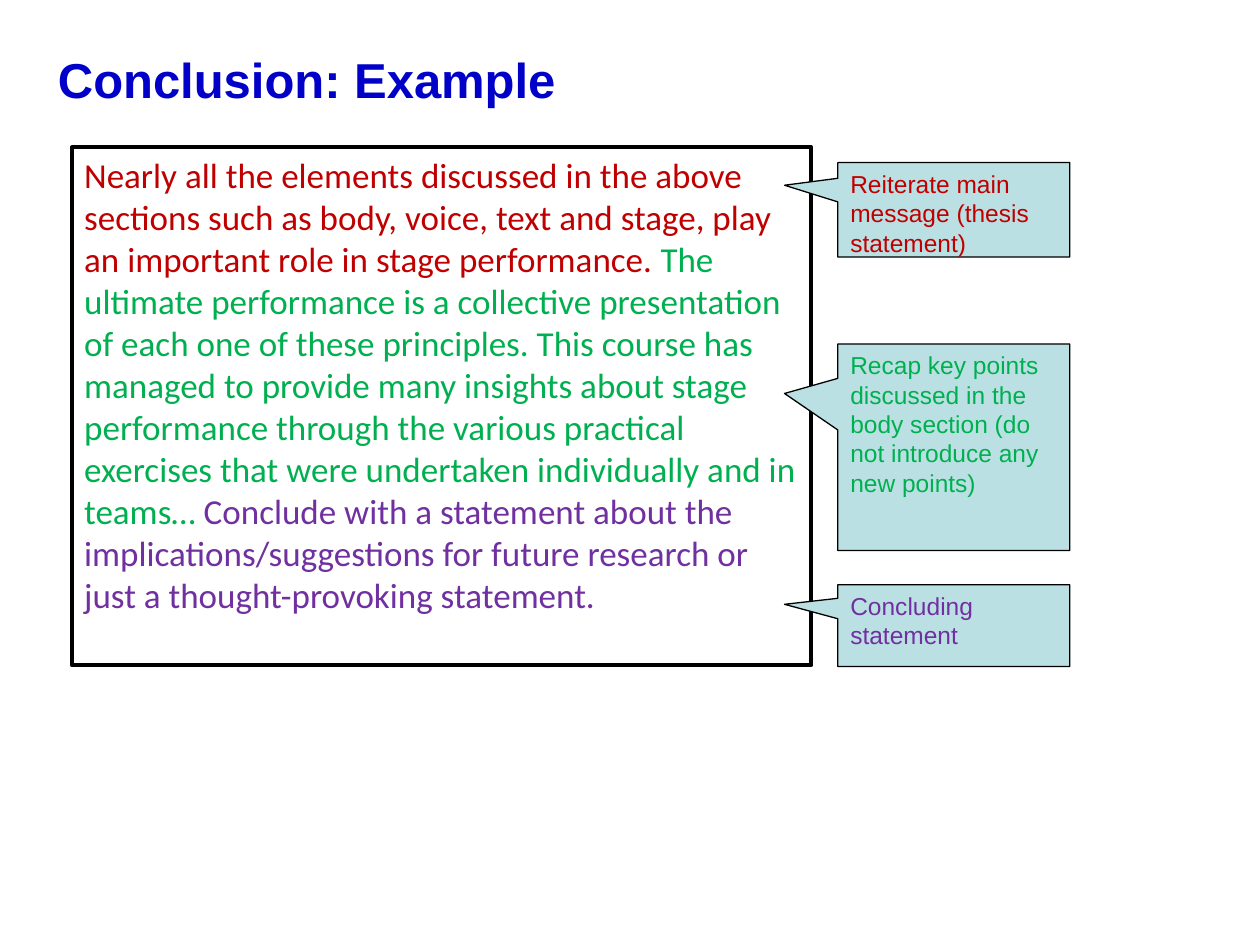
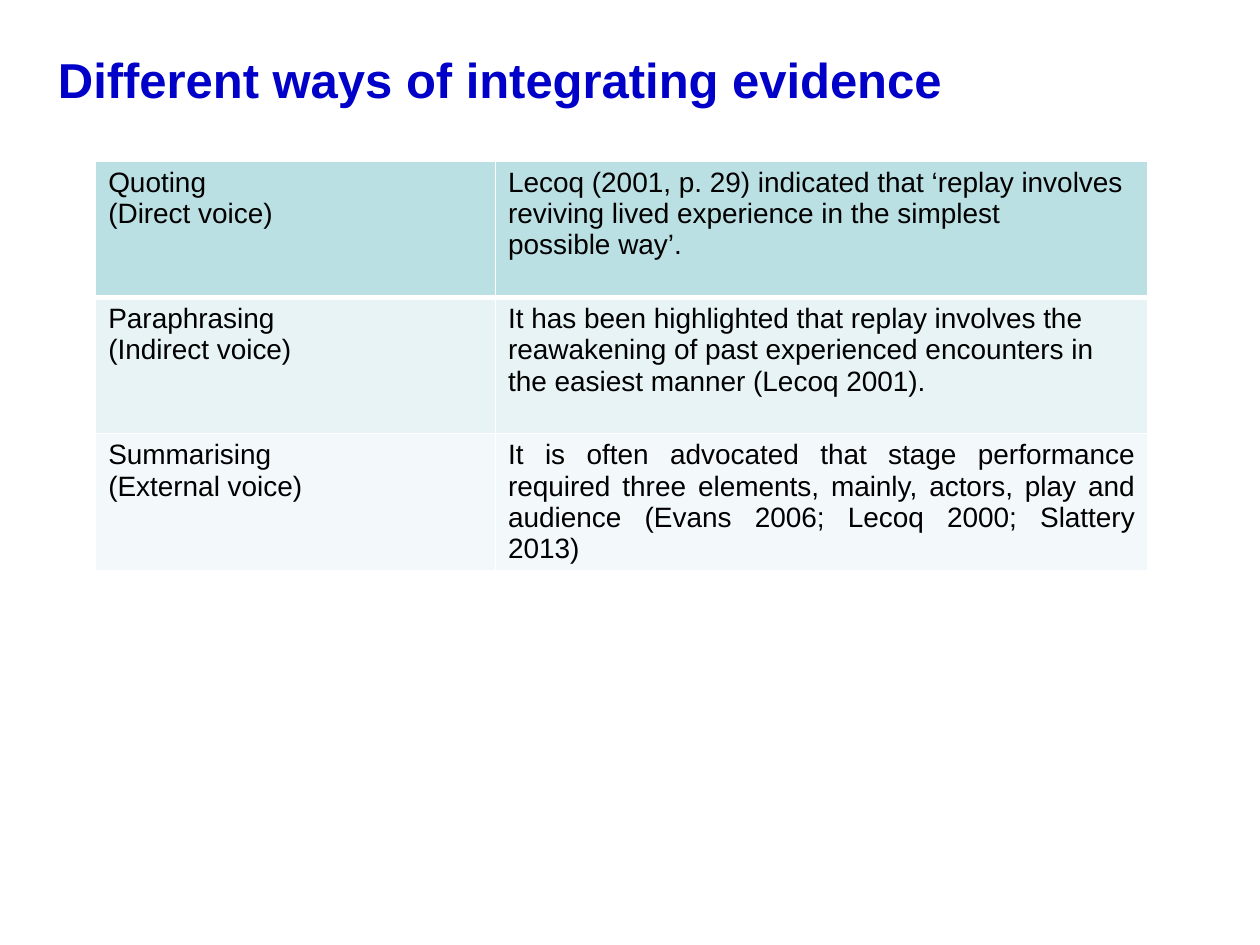
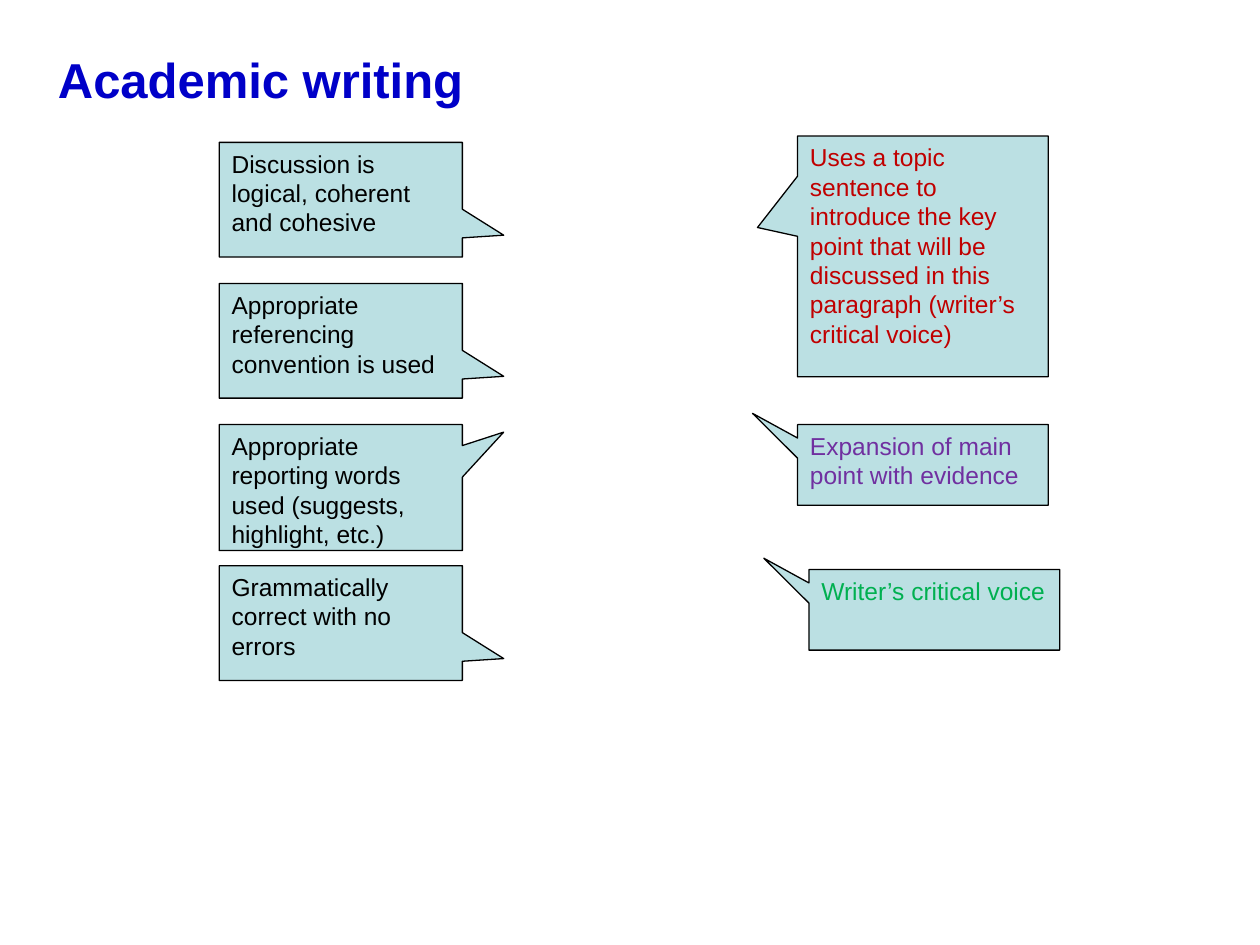
from dataclasses import dataclass

from lxml import etree
from pptx import Presentation
from pptx.dml.color import RGBColor
from pptx.enum.shapes import MSO_SHAPE
from pptx.enum.text import MSO_ANCHOR, PP_ALIGN
from pptx.oxml.ns import qn
from pptx.util import Inches, Pt

RECTANGLE = MSO_SHAPE.RECTANGLE
CALLOUT = MSO_SHAPE.RECTANGULAR_CALLOUT
TOP = MSO_ANCHOR.TOP
LEFT, JUSTIFY = PP_ALIGN.LEFT, PP_ALIGN.JUSTIFY
TITLE_ONLY = 5
COLUMNS, ROWS = 100, 75
SLIDE_WIDTH, SLIDE_HEIGHT = Inches(10), Inches(7.5)


@dataclass(frozen=True)
class Theme:
    """Colours, fonts and type sizes shared by the slides."""
    title: str = "0000C8"
    black: str = "000000"
    white: str = "FFFFFF"
    red: str = "C00000"
    green: str = "00B050"
    purple: str = "7030A0"
    panel: str = "BBE0E3"
    table_rows: tuple = ("BBE0E3", "E7F3F4", "F3F9FA")
    font: str = "Arial"
    essay_font: str = "Calibri"
    title_size: int = 28
    essay_size: int = 20
    table_size: int = 16
    callout_size: int = 14


@dataclass(frozen=True)
class Box:
    """A region measured in grid columns and rows."""
    left: float
    top: float
    width: float
    height: float

    def emu(self):
        """Return left, top, width and height as slide lengths."""
        column, row = SLIDE_WIDTH / COLUMNS, SLIDE_HEIGHT / ROWS
        return (round(self.left * column), round(self.top * row),
                round(self.width * column), round(self.height * row))


@dataclass(frozen=True)
class Callout:
    """A note placed by its offset inside a column of callouts."""
    text: str
    color: str
    top: float
    height: float
    pointer: tuple
    indent: float = 0


THEME = Theme()
TITLE_BOX = Box(3.6, 2.9, 91.1, 7.3)


def add_run(paragraph, text, size, color, font=THEME.font, bold=False):
    """Add one formatted run to a paragraph."""
    run = paragraph.add_run()
    run.text = text
    run.font.size, run.font.name, run.font.bold = Pt(size), font, bold
    run.font.color.rgb = RGBColor.from_string(color)


def add_title_slide(presentation, title):
    """Add a slide with the shared title style."""
    slide = presentation.slides.add_slide(presentation.slide_layouts[TITLE_ONLY])
    shape = slide.shapes.title
    shape.left, shape.top, shape.width, shape.height = TITLE_BOX.emu()
    frame = shape.text_frame
    frame.vertical_anchor, frame.margin_top = TOP, Inches(0.1)
    paragraph = frame.paragraphs[0]
    paragraph.alignment = LEFT
    add_run(paragraph, title, THEME.title_size, THEME.title, bold=True)
    return slide


def add_panel(slide, kind, box, fill, line_width):
    """Add an outlined shape and return it with its left-aligned paragraph."""
    shape = slide.shapes.add_shape(kind, *box.emu())
    shape.shadow.inherit = False
    shape.fill.solid()
    shape.fill.fore_color.rgb = RGBColor.from_string(fill)
    shape.line.color.rgb = RGBColor.from_string(THEME.black)
    shape.line.width = Pt(line_width)
    frame = shape.text_frame
    frame.word_wrap, frame.vertical_anchor = True, TOP
    frame.paragraphs[0].alignment = LEFT
    return shape, frame.paragraphs[0]


def add_essay(slide, box, passages):
    """Add the framed sample text with one colour for each passage."""
    paragraph = add_panel(slide, RECTANGLE, box, THEME.white, 2.25)[1]
    for text, color in passages:
        add_run(paragraph, text, THEME.essay_size, color, THEME.essay_font)


def add_callouts(slide, box, callouts):
    """Add a column of callouts relative to the box."""
    for callout in callouts:
        place = Box(box.left + callout.indent, box.top + callout.top,
                    box.width, callout.height)
        shape, paragraph = add_panel(slide, CALLOUT, place, THEME.panel, 0.75)
        shape.adjustments[0], shape.adjustments[1] = callout.pointer
        add_run(paragraph, callout.text, THEME.callout_size, callout.color)


def set_borders(cell, widths):
    """Draw white borders with the given width for each side."""
    properties = cell._tc.get_or_add_tcPr()
    for side, width in widths.items():
        line = etree.SubElement(properties, qn(f"a:ln{side}"), w=str(Pt(width)))
        fill = etree.SubElement(line, qn("a:solidFill"))
        etree.SubElement(fill, qn("a:srgbClr"), val=THEME.white)


def add_evidence_table(slide, box, column_shares, row_shares, rows):
    """Add the table of evidence types, sized by shares of the box."""
    left, top, width, height = box.emu()
    table = slide.shapes.add_table(len(rows), len(column_shares),
                                   left, top, width, height).table
    for column, share in zip(table.columns, column_shares):
        column.width = round(width * share)
    for row, share in zip(table.rows, row_shares):
        row.height = round(height * share)
    for row_index, texts in enumerate(rows):
        borders = {"L": 1, "R": 1, "T": 3 if row_index == 1 else 1,
                   "B": 3 if row_index == 0 else 1}
        for column_index, lines in enumerate(texts):
            cell = table.cell(row_index, column_index)
            set_borders(cell, borders)
            cell.fill.solid()
            cell.fill.fore_color.rgb = RGBColor.from_string(THEME.table_rows[row_index])
            frame = cell.text_frame
            for line_index, text in enumerate(lines):
                paragraph = frame.add_paragraph() if line_index else frame.paragraphs[0]
                justified = row_index == len(rows) - 1 and column_index == 1
                paragraph.alignment = JUSTIFY if justified else LEFT
                add_run(paragraph, text, THEME.table_size, THEME.black)


def build_conclusion(presentation):
    """Build the annotated conclusion slide."""
    slide = add_title_slide(presentation, "Conclusion: Example")
    add_essay(slide, Box(5.7, 11.7, 58.7, 41.1), (
        ("Nearly all the elements discussed in the above sections such as body, voice, "
         "text and stage, play an important role in stage performance. ", THEME.red),
        ("The ultimate performance is a collective presentation of each one of these "
         "principles. This course has managed to provide many insights about stage "
         "performance through the various practical exercises that were undertaken "
         "individually and in teams… ", THEME.green),
        ("Conclude with a statement about the implications/suggestions for future "
         "research or just a thought-provoking statement.", THEME.purple),
    ))
    pointer = (-0.73, -0.26)
    add_callouts(slide, Box(66.5, 12.9, 18.4, 40), (
        Callout("Reiterate main message (thesis statement)", THEME.red, 0, 7.5, pointer),
        Callout("Recap key points discussed in the body section (do not introduce any "
                "new points)", THEME.green, 14.4, 16.4, pointer),
        Callout("Concluding statement", THEME.purple, 33.5, 6.5, pointer),
    ))


def build_evidence(presentation):
    """Build the slide that compares ways of citing evidence."""
    slide = add_title_slide(presentation, "Different ways of integrating evidence")
    add_evidence_table(slide, Box(7.6, 12.8, 83.5, 30), (0.38, 0.62), (0.36, 0.36, 0.28), (
        (("Quoting", "(Direct voice)"),
         ("Lecoq (2001, p. 29) indicated that ‘replay involves reviving lived experience "
          "in the simplest", "possible way’.")),
        (("Paraphrasing", "(Indirect voice)"),
         ("It has been highlighted that replay involves the reawakening of past "
          "experienced encounters in the easiest manner (Lecoq 2001).",)),
        (("Summarising", "(External voice)"),
         ("It is often advocated that stage performance required three elements, mainly, "
          "actors, play and audience (Evans 2006; Lecoq 2000; Slattery 2013)",)),
    ))


def build_writing(presentation):
    """Build the academic writing slide with two columns of callouts."""
    slide = add_title_slide(presentation, "Academic writing")
    low, high = (0.67, 0.31), (0.67, -0.44)
    qualities = (
        ("Discussion is logical, coherent and cohesive", 9.1, low),
        ("Appropriate referencing convention is used", 9.1, low),
        ("Appropriate reporting words used (suggests, highlight, etc.)", 10, high),
        ("Grammatically correct with no errors", 9.1, low),
    )
    pitch = 11.2
    add_callouts(slide, Box(17.4, 11.3, 19.3, 42.7), [
        Callout(text, THEME.black, index * pitch, height, pointer)
        for index, (text, height, pointer) in enumerate(qualities)
    ])
    upper_left = (-0.68, -0.64)
    add_callouts(slide, Box(63.3, 10.8, 19.9, 40.8), (
        Callout("Uses a topic sentence to introduce the key point that will be discussed "
                "in this paragraph (writer’s critical voice)", THEME.red, 0, 19.1,
                (-0.66, -0.12)),
        Callout("Expansion of main point with evidence", THEME.purple, 22.9, 6.4, upper_left),
        Callout("Writer’s critical voice", THEME.green, 34.4, 6.4, upper_left, 0.9),
    ))


def main():
    """Build and save the presentation."""
    presentation = Presentation()
    presentation.slide_width, presentation.slide_height = SLIDE_WIDTH, SLIDE_HEIGHT
    for build in (build_conclusion, build_evidence, build_writing):
        build(presentation)
    presentation.save("out.pptx")


if __name__ == "__main__":
    main()
